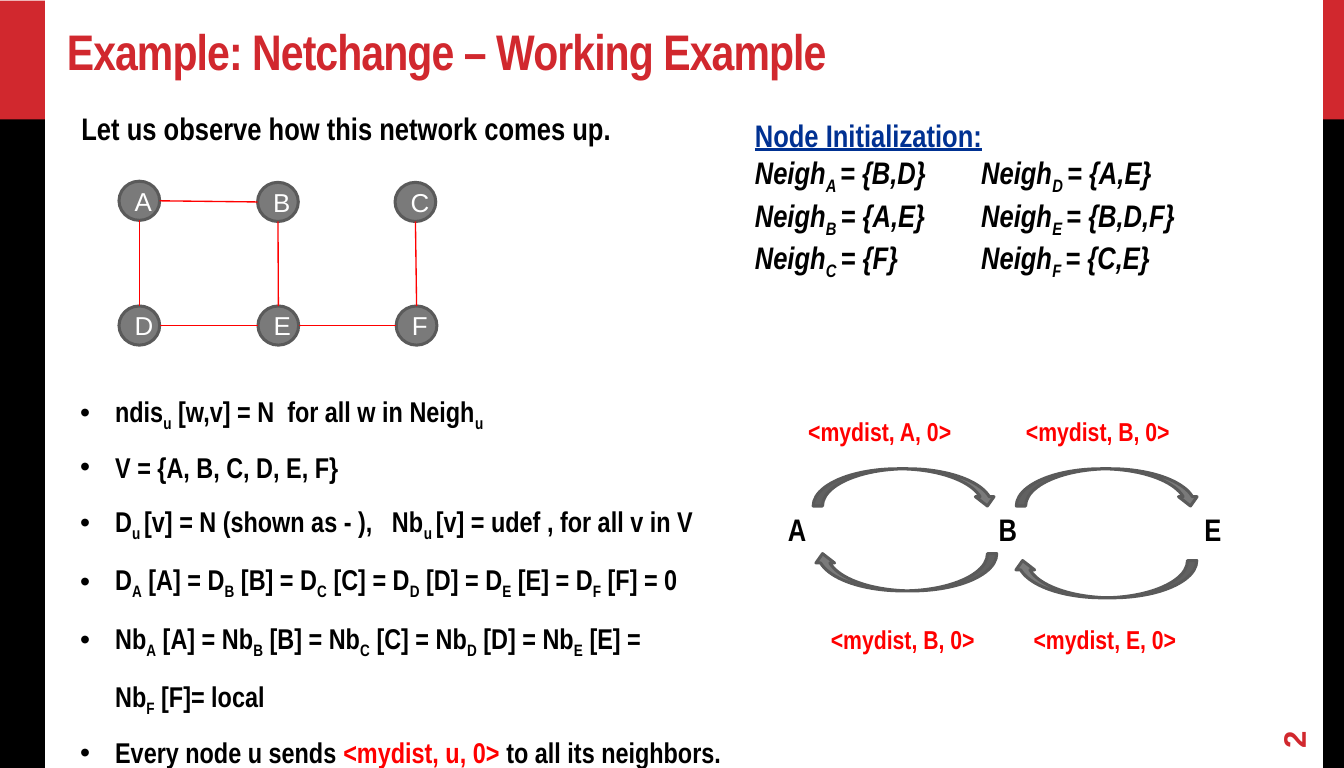
from pptx import Presentation, util as u
from pptx.dml.color import RGBColor
from pptx.enum import shapes, text
from pptx.oxml.ns import qn
from lxml import etree

RED, BRIGHT, BLACK, NAVY = "D1282E", "FF0000", "000000", "003192"
GREY, EDGE, WHITE = "7A7A7A", "5A5A5A", "FFFFFF"
SHAPE = shapes.MSO_SHAPE
WIDE, HIGH = 1.06, 1.02


def hue(code):
    return RGBColor.from_string(code)


class Deck:
    """Holds the text style and the slide being drawn."""

    def __init__(self, wide, high):
        self.file = Presentation()
        self.file.slide_width, self.file.slide_height = wide, high
        self.slide = self.file.slides.add_slide(self.file.slide_layouts[5])
        self.items = self.slide.shapes
        self.face = "Arial Narrow"

    def run(self, para, words, size, color=BLACK, bold=True, face=None, **look):
        for index, part in enumerate(words.split("|")):
            if not part:
                continue
            run = para.add_run()
            run.text = part
            font = run.font
            font.size, font.name, font.bold = u.Pt(size), face or self.face, bold
            font.color.rgb = hue(color)
            for name, value in look.items():
                setattr(font, name, value)
            if index % 2:
                run._r.get_or_add_rPr().set("baseline", "-25000")

    def title(self, words, size, *box):
        item = self.items.title
        item.left, item.top, item.width, item.height = map(u.Cm, box)
        frame = item.text_frame
        frame.auto_size = text.MSO_AUTO_SIZE.NONE
        frame.vertical_anchor = text.MSO_ANCHOR.BOTTOM
        self.inset(frame)
        para = frame.paragraphs[0]
        para.alignment = text.PP_ALIGN.LEFT
        self.run(para, words, size, RED)
        para.runs[0]._r.get_or_add_rPr().set("spc", "-70")

    def inset(self, frame):
        frame.margin_left = frame.margin_right = u.Cm(0.28)
        frame.margin_top = frame.margin_bottom = u.Cm(0.14)

    def box(self, *box, wrap=False):
        item = self.items.add_textbox(*map(u.Cm, box))
        item.text_frame.word_wrap = wrap
        return item

    def label(self, words, size, *box, color=BLACK):
        self.run(self.box(*box).text_frame.paragraphs[0], words, size, color)

    def shape(self, kind, fill, *box, line=None, turn=0):
        item = self.items.add_shape(kind, *map(u.Cm, box))
        item.shadow.inherit = False
        item.fill.solid()
        item.fill.fore_color.rgb = hue(fill)
        item.rotation = turn
        if line:
            item.line.color.rgb = hue(line)
            item.line.width = u.Pt(2.25)
        else:
            item.line.fill.background()
        return item

    def link(self, start, end, color):
        item = self.items.add_connector(
            shapes.MSO_CONNECTOR.STRAIGHT, *map(u.Cm, start + end))
        item.line.color.rgb = hue(color)
        item.line.width = u.Pt(1)
        etree.SubElement(item._element.spPr, qn("a:effectLst"))

    def node(self, name, x, y):
        item = self.shape(SHAPE.OVAL, GREY, x - WIDE / 2, y - HIGH / 2,
                          WIDE, HIGH, line=EDGE)
        para = item.text_frame.paragraphs[0]
        para.alignment = text.PP_ALIGN.CENTER
        self.run(para, name, 19.1, WHITE, False, "Arial")

    def lines(self, frame, count):
        for _ in range(count - 1):
            frame.add_paragraph()
        return frame.paragraphs

    def bullet(self, para):
        para.line_spacing = 1.5
        props = para._p.get_or_add_pPr()
        props.set("marL", str(u.Cm(0.91)))
        props.set("indent", str(-u.Cm(0.91)))
        etree.SubElement(props, qn("a:buFont"), typeface="Arial")
        etree.SubElement(props, qn("a:buChar"), char="•")

    def tab(self, para, place):
        stops = etree.SubElement(para._p.get_or_add_pPr(), qn("a:tabLst"))
        etree.SubElement(stops, qn("a:tab"), pos=str(u.Cm(place)), algn="l")


def frame_page(deck):
    for left, top, wide in ((34.46, 0, 0.56), (0, 0.02, 1.17)):
        deck.shape(SHAPE.RECTANGLE, RED, left, top, wide, 3.98)
        deck.shape(SHAPE.RECTANGLE, BLACK, left, 3.11, wide, 16.89)
    deck.title("Example: Netchange – Working Example", 36.9, 1.46, 0.45, 32.66, 1.78)
    lead = deck.box(1.84, 2.71, 32.08, 15.6, wrap=True).text_frame
    deck.inset(lead)
    lead.paragraphs[0].space_before = u.Pt(4.6)
    deck.run(lead.paragraphs[0], "Let us observe how this network comes up.", 23)
    page = deck.box(32.66, 18.31, 2.06, 0.86, wrap=True)
    page.rotation = 270
    deck.inset(page.text_frame)
    page.text_frame.vertical_anchor = text.MSO_ANCHOR.MIDDLE
    deck.run(page.text_frame.paragraphs[0], "2", 23, RED, face="Arial")


def draw_graph(deck):
    spots = {"A": (3.63, 5.23), "B": (7.24, 5.26), "C": (10.82, 5.26),
             "D": (3.63, 8.48), "E": (7.25, 8.48), "F": (10.85, 8.48)}
    for name, spot in spots.items():
        deck.node(name, *spot)
    for one, two in ("AB", "BE", "AD", "DE", "EF", "CF"):
        (x, y), (right, low) = spots[one], spots[two]
        if right - x > 1:
            deck.link((x + WIDE / 2, y), (right - WIDE / 2, low), BRIGHT)
        else:
            deck.link((x, y + HIGH / 2), (right, low - HIGH / 2), BRIGHT)


def list_rules(deck):
    rules = (
        "ndis|u| [w,v] = N  for all w in Neigh|u|",
        "V = {A, B, C, D, E, F}",
        "D|u |[v] = N (shown as - ),   Nb|u |[v] = udef , for all v in V",
        " = ".join(f"D|{n}| [{n}]" for n in "ABCDEF") + " = 0",
        " = ".join(f"Nb|{n}| [{n}]" for n in "ABCDE") + " = ",
        "Every node u sends ",
    )
    paras = deck.lines(deck.box(1.84, 9.62, 17.25, 9.7, wrap=True).text_frame, len(rules))
    for para, rule in zip(paras, rules):
        deck.bullet(para)
        deck.run(para, rule, 21.1)
    paras[4].add_line_break()
    deck.run(paras[4], "Nb|F| [F]= local", 21.1)
    deck.run(paras[5], "<mydist, u, 0>", 21.1, BRIGHT)
    deck.run(paras[5], " to all its neighbors.", 21.1)


def list_neighbors(deck):
    rows = (("A", "B,D", "D", "A,E"), ("B", "A,E", "E", "B,D,F"), ("C", "F", "F", "C,E"))
    paras = deck.lines(deck.box(19.41, 2.91, 11.61, 5.16).text_frame, 4)
    deck.run(paras[0], "Node Initialization:", 23, NAVY, underline=True)
    for para, (one, near, two, far) in zip(paras[1:], rows):
        deck.tab(para, 5.71)
        deck.run(para, f"Neigh|{one} |= {{{near}}}\t Neigh|{two} |= {{{far}}}",
                 23, italic=True)


def draw_swaps(deck):
    for name, left in (("A", 20.27), ("B", 25.76), ("E", 31.12)):
        deck.label(name, 23, left, 13.17, 0.99, 1.24)
    swaps = (("A", 21.18, 12.21, 0, 20.8, 10.71), ("B", 26.47, 12.21, 0, 26.47, 10.71),
             ("B", 21.18, 14.42, 180, 21.39, 16.12), ("E", 26.39, 14.6, 180, 26.67, 16.12))
    for name, left, top, turn, x, y in swaps:
        deck.shape(SHAPE.CURVED_DOWN_ARROW, GREY, left, top, 4.78, 0.97,
                   line=EDGE, turn=turn)
        deck.label(f"<mydist, {name}, 0>", 19.1, x, y, 4.3, 1.07, color=BRIGHT)


def main():
    deck = Deck(u.Pt(992.25), u.Pt(567))
    frame_page(deck)
    draw_graph(deck)
    list_rules(deck)
    list_neighbors(deck)
    draw_swaps(deck)
    deck.file.save("out.pptx")


if __name__ == "__main__":
    main()
